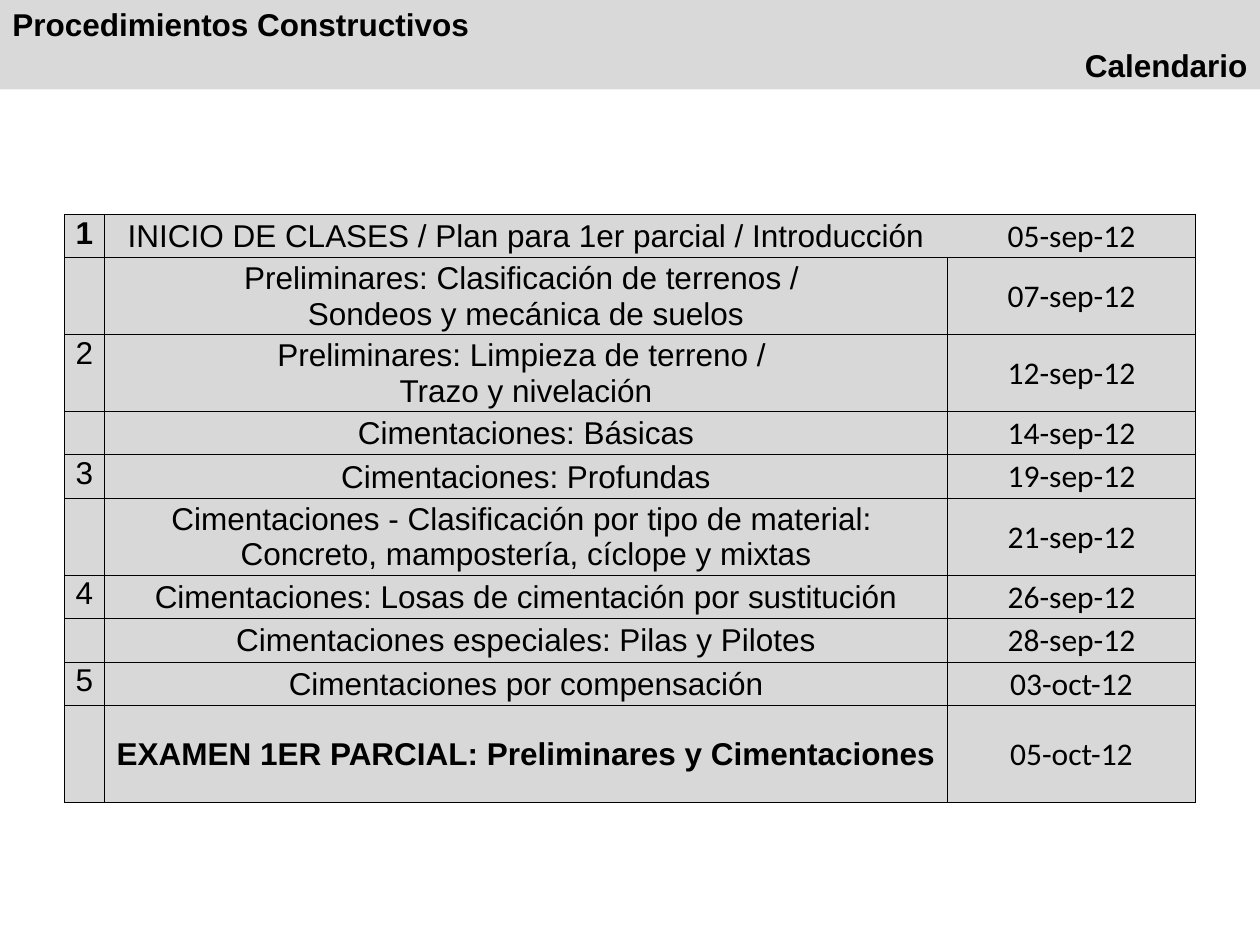
from lxml import etree
from pptx import Presentation, util as u
from pptx.dml.color import RGBColor
from pptx.enum import shapes, text
from pptx.oxml.ns import qn

# Content
HEADER = [("Procedimientos Constructivos", text.PP_ALIGN.LEFT),
          ("Calendario", text.PP_ALIGN.RIGHT)]
CLASSES = [  # week, topic lines, date
    ("1", ["INICIO DE CLASES / Plan para 1er parcial / Introducción"], "05-sep-12"),
    ("", ["Preliminares: Clasificación de terrenos / ", "Sondeos y mecánica de suelos"], "07-sep-12"),
    ("2", ["Preliminares: Limpieza de terreno / ", "Trazo y nivelación"], "12-sep-12"),
    ("", ["Cimentaciones: Básicas"], "14-sep-12"),
    ("3", ["Cimentaciones: Profundas"], "19-sep-12"),
    ("", ["Cimentaciones - Clasificación por tipo de material: ",
          "Concreto, mampostería, cíclope y mixtas"], "21-sep-12"),
    ("4", ["Cimentaciones: Losas de cimentación por sustitución"], "26-sep-12"),
    ("", ["Cimentaciones especiales: Pilas y Pilotes"], "28-sep-12"),
    ("5", ["Cimentaciones por compensación"], "03-oct-12"),
    ("", ["EXAMEN 1ER PARCIAL: Preliminares y Cimentaciones"], "05-oct-12"),
]
BOLD = {(0, 0), (len(CLASSES) - 1, 1)}
OPEN_SIDES = {(0, 1): "R", (0, 2): "L"}  # no rule between first topic and date

# Format
COLORS = {"band": "D9D9D9", "cell": "D8D8D8", "ink": "000000"}
FONTS = ["Arial", "Arial", "Calibri"]
MARGINS = {"margin_left": 0.01, "margin_right": 0.01, "margin_top": 0.01, "margin_bottom": 0}
COLS = [0.32, 6.69, 1.97]
LEFT, TOP, HEIGHT = 0.51, 1.7, 4.67
DOUBLE, EXAM = 0.61, 0.77
doubles = sum(len(topic) == 2 for _, topic, _ in CLASSES)
SINGLE = (HEIGHT - EXAM - doubles * DOUBLE) / (len(CLASSES) - doubles - 1)


def paint(obj, color):
    obj.fill.solid()
    obj.fill.fore_color.rgb = RGBColor.from_string(COLORS[color])


def write(tf, lines, font="Arial", bold=False):
    """Fill a text frame from (line, alignment) pairs."""
    for i, (line, align) in enumerate(lines):
        p = tf.paragraphs[0] if i == 0 else tf.add_paragraph()
        p.alignment = align
        r = p.add_run()
        r.text = line
        for name, value in {"name": font, "size": u.Pt(18), "bold": bold}.items():
            setattr(r.font, name, value)
        r.font.color.rgb = RGBColor.from_string(COLORS["ink"])


def rule_cell(cell, open_side):
    """Thin rule on every side but the open one."""
    props = cell._tc.get_or_add_tcPr()
    for i, side in enumerate("LRTB"):
        ln = etree.Element(qn(f"a:ln{side}"), w=str(u.Pt(0.5)))
        props.insert(i, ln)
        if side == open_side:
            etree.SubElement(ln, qn("a:noFill"))
        else:
            fill = etree.SubElement(ln, qn("a:solidFill"))
            etree.SubElement(fill, qn("a:srgbClr"), val=COLORS["ink"])


prs = Presentation()
prs.slide_width, prs.slide_height = u.Inches(10), u.Inches(7.5)
s = prs.slides.add_slide(prs.slide_layouts[6])

# Header band
sp = s.shapes.add_shape(shapes.MSO_SHAPE.RECTANGLE, 0, 0, prs.slide_width, u.Inches(0.71))
sp.shadow.inherit = False
sp.line.fill.background()
paint(sp, "band")
write(sp.text_frame, HEADER, bold=True)
sp.text_frame.paragraphs[1].space_before = u.Pt(2)

# Calendar table
table = s.shapes.add_table(len(CLASSES), len(COLS), u.Inches(LEFT), u.Inches(TOP),
                           u.Inches(sum(COLS)), u.Inches(HEIGHT)).table
table.first_row = table.horz_banding = False
for col, width in zip(table.columns, COLS):
    col.width = u.Inches(width)

for i, (week, topic, date) in enumerate(CLASSES):
    last = i == len(CLASSES) - 1
    table.rows[i].height = u.Inches(EXAM if last else DOUBLE if len(topic) == 2 else SINGLE)
    for j, lines in enumerate([[week], topic, [date]]):
        cell = table.cell(i, j)
        for name, value in MARGINS.items():
            setattr(cell, name, u.Inches(value))
        cell.vertical_anchor = text.MSO_ANCHOR.MIDDLE if j else text.MSO_ANCHOR.TOP
        paint(cell, "cell")
        rule_cell(cell, OPEN_SIDES.get((i, j)))
        write(cell.text_frame, [(line, text.PP_ALIGN.CENTER) for line in lines],
              FONTS[j], (i, j) in BOLD)

prs.save("out.pptx")
